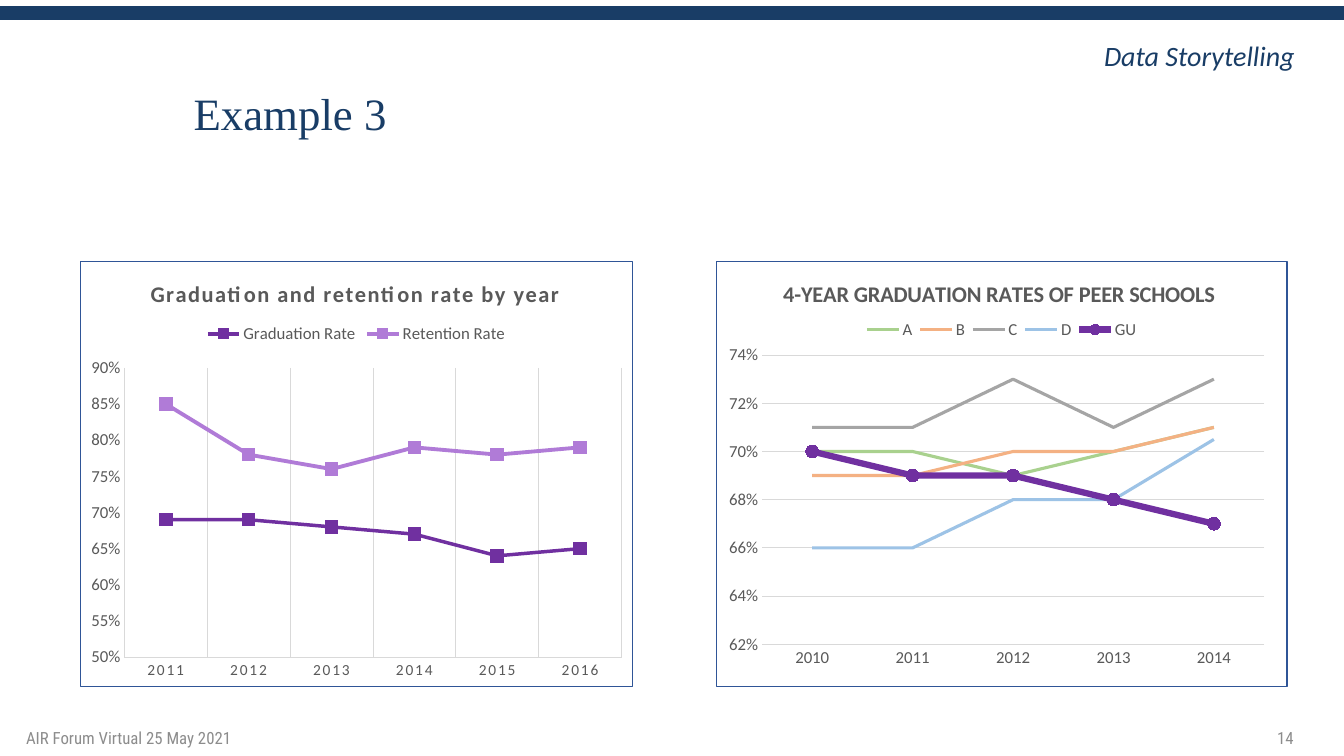
from dataclasses import dataclass

from pptx import Presentation
from pptx.chart.data import CategoryChartData
from pptx.dml.color import RGBColor
from pptx.enum.chart import (XL_CHART_TYPE, XL_LEGEND_POSITION,
                             XL_MARKER_STYLE, XL_TICK_MARK)
from pptx.enum.shapes import MSO_CONNECTOR
from pptx.enum.text import MSO_ANCHOR, PP_ALIGN
from pptx.oxml import parse_xml
from pptx.oxml.ns import nsdecls, qn
from pptx.util import Inches, Pt


@dataclass(frozen=True)
class Theme:
    navy: str = "193D66"
    soft: str = "8C8C8C"
    text: str = "595959"
    grid: str = "D9D9D9"
    edge: str = "2F5597"
    grad: str = "7030A0"
    keep: str = "B07BD7"
    peers: tuple = ("A9D18E", "F4B183", "A5A5A5", "9DC3E6")
    head: str = "Times New Roman"
    body: str = "Calibri"
    foot: str = "Roboto Condensed"
    big: int = 32
    tag: int = 20
    name: int = 16
    note: int = 12
    small: int = 11


T = Theme()


def style(font, size, color, face=T.body, bold=False, italic=False):
    font.size, font.name = Pt(size), face
    font.bold, font.italic = bold, italic
    font.color.rgb = RGBColor.from_string(color)


def write(frame, text, align=PP_ALIGN.LEFT, anchor=MSO_ANCHOR.MIDDLE,
          gap=None, **look):
    frame.word_wrap = True
    frame.vertical_anchor = anchor
    para = frame.paragraphs[0]
    para.alignment = align
    para.line_spacing = gap
    run = para.add_run()
    run.text = text
    style(run.font, **look)


def label(slide, box, text, **look):
    shape = slide.shapes.add_textbox(*map(Inches, box))
    write(shape.text_frame, text, **look)


def ink(line, color, width):
    line.color.rgb = RGBColor.from_string(color)
    line.width = Pt(width)


def place(node, index, box, inner=False):
    """Fix the layout of a chart part, in shares of the chart."""
    for old in node.findall(qn("c:layout")):
        node.remove(old)
    tags = '<c:layoutTarget val="inner"/>' if inner else ""
    tags += '<c:xMode val="edge"/><c:yMode val="edge"/>'
    tags += "".join(f'<c:{k} val="{v}"/>' for k, v in zip("xywh", box))
    node.insert(index, parse_xml(
        f'<c:layout {nsdecls("c")}><c:manualLayout>{tags}'
        '</c:manualLayout></c:layout>'))


def space(node, points):
    """Letter spacing on every run style below a node."""
    for tag in ("a:rPr", "a:defRPr"):
        for props in node.iter(qn(tag)):
            props.set("spc", str(round(points * 100)))


def frame(chart):
    """White chart area with a thin border."""
    body = chart.element.find(qn("c:chart"))
    body.addnext(parse_xml(
        f'<c:spPr {nsdecls("c", "a")}><a:solidFill><a:srgbClr val="FFFFFF"/>'
        f'</a:solidFill><a:ln w="{Pt(0.75)}"><a:solidFill>'
        f'<a:srgbClr val="{T.edge}"/></a:solidFill></a:ln></c:spPr>'))


def graph(slide, box, title, years, rows, scale, spots):
    """Line chart; rows hold name, values, colour, width and marker."""
    data = CategoryChartData(number_format="0%")
    data.categories = years
    for name, vals, *_ in rows:
        data.add_series(name, vals)
    chart = slide.shapes.add_chart(
        XL_CHART_TYPE.LINE_MARKERS, *map(Inches, box), data).chart
    style(chart.font, T.note, T.text)
    frame(chart)

    # Title, legend and plot
    chart.has_title = chart.has_legend = True
    write(chart.chart_title.text_frame, title, align=PP_ALIGN.CENTER,
          size=T.name, color=T.text, bold=True)
    chart.legend.position = XL_LEGEND_POSITION.TOP
    chart.legend.include_in_layout = False
    style(chart.legend.font, T.note, T.text)
    body = chart.element.find(qn("c:chart"))
    place(body.find(qn("c:title")), 1, spots["title"])
    place(body.find(qn("c:plotArea")), 0, spots["plot"], inner=True)
    place(body.find(qn("c:plotArea")).getnext(), 1, spots["legend"])

    # Axes
    low, high, step = scale
    axis = chart.value_axis
    axis.minimum_scale, axis.maximum_scale, axis.major_unit = low, high, step
    axis.tick_labels.number_format = "0%"
    axis.tick_labels.number_format_is_linked = False
    for side in (chart.category_axis, axis):
        side.major_tick_mark = side.minor_tick_mark = XL_TICK_MARK.NONE
        style(side.tick_labels.font, T.note, T.text)
        ink(side.format.line, T.grid, 0.75)

    # Lines
    chart.plots[0].vary_by_categories = False
    for line, (_, _, color, width, mark) in zip(chart.plots[0].series, rows):
        line.smooth = False
        ink(line.format.line, color, width)
        line.marker.style = mark
        if mark != XL_MARKER_STYLE.NONE:
            line.marker.size = 9
            line.marker.format.fill.solid()
            line.marker.format.fill.fore_color.rgb = RGBColor.from_string(color)
            ink(line.marker.format.line, color, 0.75)
    return chart


def rule(axis, on):
    axis.has_major_gridlines = on
    if on:
        ink(axis.major_gridlines.format.line, T.grid, 0.75)


def rates(slide, box):
    """Graduation and retention, with upright grid lines."""
    mark = XL_MARKER_STYLE.SQUARE
    rows = [
        ("Graduation Rate", (.69, .69, .68, .67, .64, .65), T.grad, 2.5, mark),
        ("Retention Rate", (.85, .78, .76, .79, .78, .79), T.keep, 2.75, mark),
    ]
    chart = graph(slide, box, "Graduation and retention rate by year",
                  [str(y) for y in range(2011, 2017)], rows, (.5, .9, .05),
                  {"title": (.12, .03), "legend": (.22, .14, .56, .06),
                   "plot": (.08, .25, .9, .68)})
    rule(chart.category_axis, True)
    rule(chart.value_axis, False)
    style(chart.category_axis.tick_labels.font, T.small, T.text)
    space(chart.chart_title.text_frame._txBody, 1.2)
    space(chart.element.find(".//" + qn("c:catAx")), 1.2)


def peers(slide, box):
    """Peer schools, with level grid lines and one strong line."""
    vals = [(.7, .7, .69, .7, .71), (.69, .69, .7, .7, .71),
            (.71, .71, .73, .71, .73), (.66, .66, .68, .68, .705)]
    rows = [(name, row, color, 2.25, XL_MARKER_STYLE.NONE)
            for name, row, color in zip("ABCD", vals, T.peers)]
    rows.append(("GU", (.7, .69, .69, .68, .67), T.grad, 4.5,
                 XL_MARKER_STYLE.CIRCLE))
    chart = graph(slide, box, "4-YEAR GRADUATION RATES OF PEER SCHOOLS",
                  [str(y) for y in range(2010, 2015)], rows, (.62, .74, .02),
                  {"title": (.11, .03), "legend": (.25, .13, .5, .06),
                   "plot": (.08, .22, .88, .68)})
    rule(chart.category_axis, False)
    rule(chart.value_axis, True)
    chart.value_axis.format.line.fill.background()


def header(slide, box):
    """Top band, series name and slide title."""
    left, top, width, _ = box
    band = slide.shapes.add_connector(
        MSO_CONNECTOR.STRAIGHT, *map(Inches, (left, top + .13,
                                              left + width, top + .13)))
    ink(band.line, T.navy, 10)
    band._element.spPr.append(parse_xml(f'<a:effectLst {nsdecls("a")}/>'))
    label(slide, (left + 10.3, top + .33, 2.64, .44), "Data Storytelling",
          align=PP_ALIGN.RIGHT, anchor=MSO_ANCHOR.TOP,
          size=T.tag, color=T.navy, italic=True)
    title = slide.shapes.title
    title.left, title.top = Inches(left + 1.82), Inches(top + .8)
    title.width, title.height = Inches(10.13), Inches(.7)
    write(title.text_frame, "Example 3", gap=.9, size=T.big,
          color=T.navy, face=T.head)


def footer(slide, box):
    """Event name and slide number."""
    left, top, width, tall = box
    look = dict(size=T.note, color=T.soft, face=T.foot)
    label(slide, (left, top, 3, tall), "AIR Forum Virtual 25 May 2021", **look)
    label(slide, (left + width - 3, top, 3, tall), "14",
          align=PP_ALIGN.RIGHT, **look)


def main():
    deck = Presentation()
    deck.slide_width, deck.slide_height = Inches(13.33), Inches(7.5)
    slide = deck.slides.add_slide(deck.slide_layouts[5])
    header(slide, (0, 0, 13.33, 1.5))
    rates(slide, (.79, 2.59, 5.49, 4.23))
    peers(slide, (7.1, 2.59, 5.67, 4.23))
    footer(slide, (.16, 7.12, 12.77, .4))
    deck.save("out.pptx")


if __name__ == "__main__":
    main()
